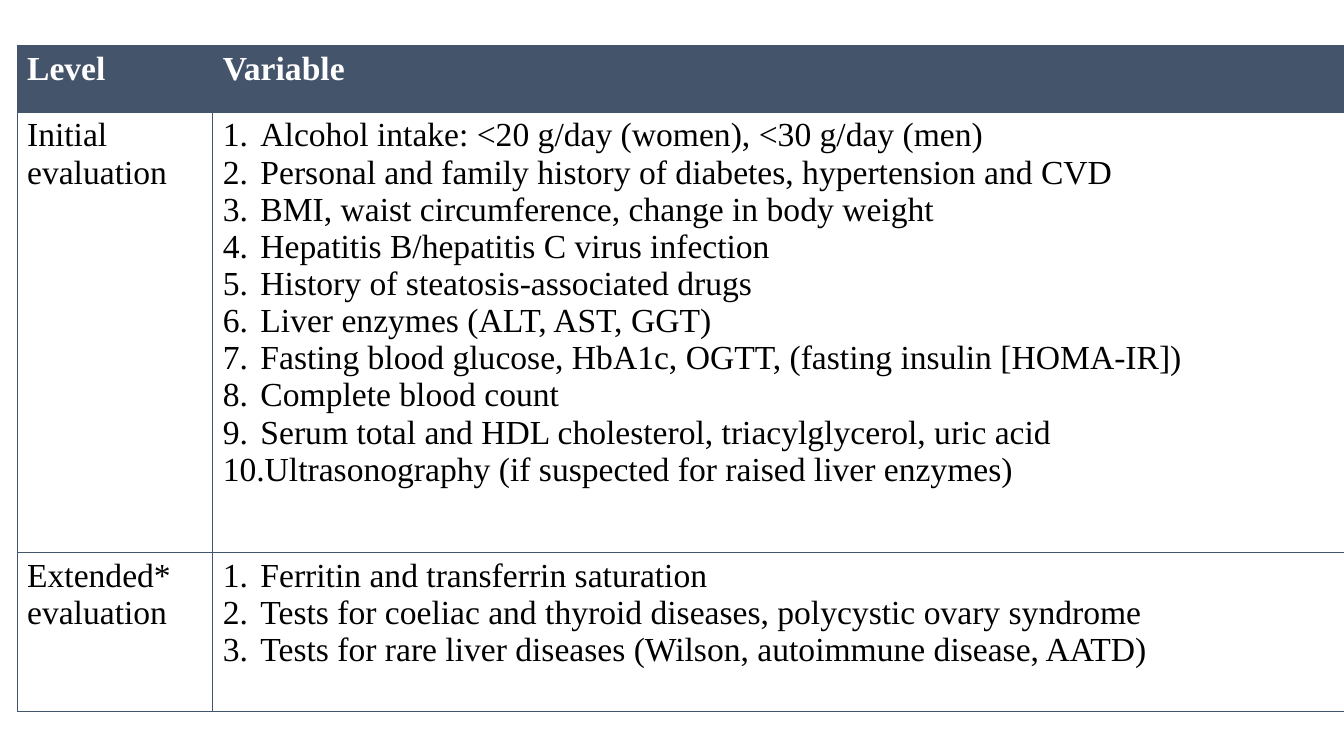
from lxml.etree import SubElement
from pptx import Presentation
from pptx.dml.color import RGBColor
from pptx.oxml.ns import qn
from pptx.util import Cm, Pt

SLATE, WHITE, BLACK = "44546A", "FFFFFF", "000000"

INITIAL_TESTS = [
    "Alcohol intake: <20 g/day (women), <30 g/day (men)",
    "Personal and family history of diabetes, hypertension and CVD",
    "BMI, waist circumference, change in body weight",
    "Hepatitis B/hepatitis C virus infection",
    "History of steatosis-associated drugs",
    "Liver enzymes (ALT, AST, GGT)",
    "Fasting blood glucose, HbA1c, OGTT, (fasting insulin [HOMA-IR])",
    "Complete blood count",
    "Serum total and HDL cholesterol, triacylglycerol, uric acid",
    "Ultrasonography (if suspected for raised liver enzymes)",
]
EXTENDED_TESTS = [
    "Ferritin and transferrin saturation",
    "Tests for coeliac and thyroid diseases, polycystic ovary syndrome",
    "Tests for rare liver diseases (Wilson, autoimmune disease, AATD)",
]
LEVELS = [
    (["Level"], ["Variable"]),
    (["Initial evaluation"], INITIAL_TESTS),
    (["Extended* evaluation"], EXTENDED_TESTS),
]


def rgb(value):
    return RGBColor.from_string(value)


def write(paragraph, text, font="Times New Roman", size=24, color=BLACK,
          bold=False, numbered=False):
    run = paragraph.add_run()
    run.text = text
    run.font.name = font
    run.font.size = Pt(size)
    run.font.bold = bold
    run.font.color.rgb = rgb(color)
    if numbered:
        properties = paragraph._p.get_or_add_pPr()
        properties.set("marL", str(Cm(0.95)))
        properties.set("indent", str(-Cm(0.95)))
        SubElement(properties, qn("a:buAutoNum"), type="arabicPeriod")


class EvaluationSlide:
    def __init__(self, presentation, border=SLATE, border_width=0.5):
        self.slide = presentation.slides.add_slide(presentation.slide_layouts[6])
        self.border = border
        self.border_width = border_width

    def add_borders(self, cell):
        properties = cell._tc.get_or_add_tcPr()
        for side in ("lnL", "lnR", "lnT", "lnB"):
            line = SubElement(properties, qn(f"a:{side}"),
                              w=str(Pt(self.border_width)))
            fill = SubElement(line, qn("a:solidFill"))
            SubElement(fill, qn("a:srgbClr"), val=self.border)

    def fill_cell(self, cell, lines, header, numbered):
        # Borders precede the fill in the cell properties
        self.add_borders(cell)
        cell.fill.solid()
        cell.fill.fore_color.rgb = rgb(SLATE if header else WHITE)
        frame = cell.text_frame
        for index, line in enumerate(lines):
            paragraph = frame.add_paragraph() if index else frame.paragraphs[0]
            write(paragraph, line, color=WHITE if header else BLACK,
                  bold=header, numbered=numbered)

    def add_table(self, rows, left, top, widths, heights):
        table = self.slide.shapes.add_table(
            len(rows), len(widths), Cm(left), Cm(top),
            Cm(sum(widths)), Cm(sum(heights))).table
        table.horz_banding = False
        for column, width in zip(table.columns, widths):
            column.width = Cm(width)
        for row, height in zip(table.rows, heights):
            row.height = Cm(height)
        for r, contents in enumerate(rows):
            for c, lines in enumerate(contents):
                self.fill_cell(table.cell(r, c), lines, header=r == 0,
                               numbered=r > 0 and c == 1)


def main():
    presentation = Presentation()
    presentation.slide_width = Cm(33.87)
    presentation.slide_height = Cm(19.05)

    # Evaluation levels and their variables
    evaluation = EvaluationSlide(presentation)
    evaluation.add_table(LEVELS, left=0.43, top=1.14,
                         widths=[4.93, 28.52], heights=[1.68, 11.1, 4.01])
    presentation.save("out.pptx")


if __name__ == "__main__":
    main()
